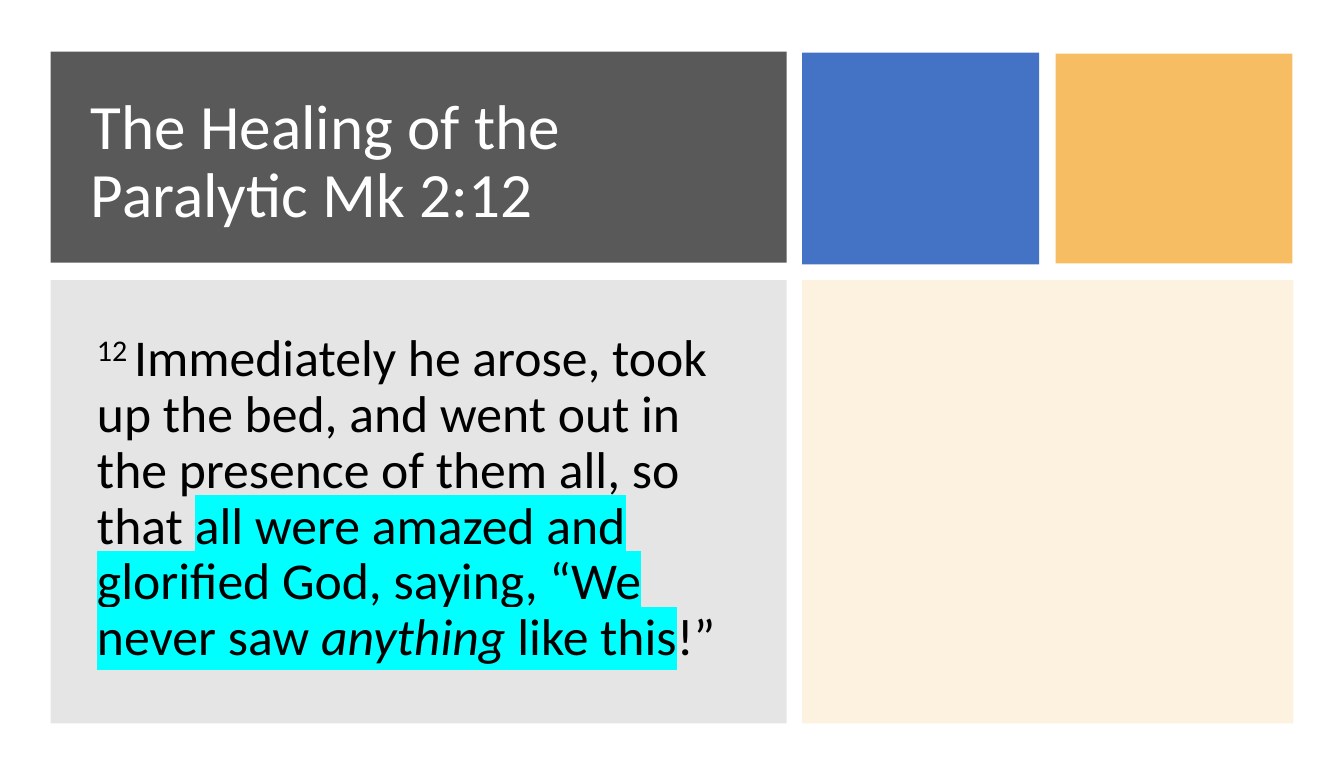
import pptx
import pptx.util
import pptx.dml.color
import pptx.enum.shapes
import pptx.enum.text
import pptx.oxml
import pptx.oxml.ns

Pt = pptx.util.Pt
HUES = {"dark": "595959", "blue": "4472C4", "gold": "F7BD62", "gray": "808080",
        "white": "FFFFFF", "black": "000000", "cyan": "00FFFF"}


class Deck:
    """Holds the style and the current slide."""

    def __init__(self, slide, font):
        self.slide = slide
        self.font = font

    def color(self, name):
        return pptx.dml.color.RGBColor.from_string(HUES[name])

    def node(self, tag, val):
        space = pptx.oxml.ns.nsdecls("a")
        return pptx.oxml.parse_xml(f'<a:{tag} {space} val="{val}"/>')

    def panel(self, left, top, width, height, hue, alpha=None):
        kind = pptx.enum.shapes.MSO_SHAPE.RECTANGLE
        box = self.slide.shapes.add_shape(kind, Pt(left), Pt(top), Pt(width), Pt(height))
        box.shadow.inherit = False
        box.line.fill.background()
        box.fill.solid()
        box.fill.fore_color.rgb = self.color(hue)
        if alpha:
            tint = box.fill._xPr.find(".//" + pptx.oxml.ns.qn("a:srgbClr"))
            tint.append(self.node("alpha", alpha * 1000))

    def text(self, left, top, width, height, size, hue, runs, before=0):
        box = self.slide.shapes.add_textbox(Pt(left), Pt(top), Pt(width), Pt(height))
        frame = box.text_frame
        frame.word_wrap = True
        frame.vertical_anchor = pptx.enum.text.MSO_ANCHOR.MIDDLE
        para = frame.paragraphs[0]
        para.line_spacing = 0.9
        para.space_before = Pt(before)
        for words, look in runs:
            self.run(para, words, size, hue, **look)

    def run(self, para, words, size, hue, mark=None, raised=False, slant=False):
        run = para.add_run()
        run.text = words
        run.font.size = Pt(size)
        run.font.name = self.font
        run.font.italic = slant
        run.font.color.rgb = self.color(hue)
        props = run.font._element
        if raised:
            props.set("baseline", "30000")
        if mark:
            space = pptx.oxml.ns.nsdecls("a")
            light = pptx.oxml.parse_xml(
                f'<a:highlight {space}><a:srgbClr val="{HUES[mark]}"/></a:highlight>')
            props.find(pptx.oxml.ns.qn("a:solidFill")).addnext(light)


def main():
    show = pptx.Presentation()
    show.slide_width, show.slide_height = Pt(936), Pt(540)
    deck = Deck(show.slides.add_slide(show.slide_layouts[6]), "Calibri")

    deck.panel(35.3, 36, 512.6, 147, "dark")
    deck.text(56.2, 57.6, 467.3, 112.3, 44, "white",
              [("The Healing of the Paralytic Mk 2:12", {})])
    deck.panel(558.7, 36.7, 165, 147.6, "blue")
    deck.panel(735.1, 37.4, 165, 146.2, "gold")
    deck.panel(35.3, 195.1, 512.6, 308.9, "gray", 20)
    deck.text(60.5, 213.8, 463, 268.6, 36, "black", [
        ("12\N{NO-BREAK SPACE}", {"raised": True}),
        ("Immediately he arose, took up the bed, and went out in "
         "the presence of them all, so that ", {}),
        ("all were amazed and glorified God, saying, “We never saw ", {"mark": "cyan"}),
        ("anything", {"mark": "cyan", "slant": True}),
        (" like this", {"mark": "cyan"}),
        ("!”", {}),
    ], before=9.8)
    deck.panel(558.7, 195.1, 342, 308.9, "gold", 20)
    show.save("out.pptx")


if __name__ == "__main__":
    main()
